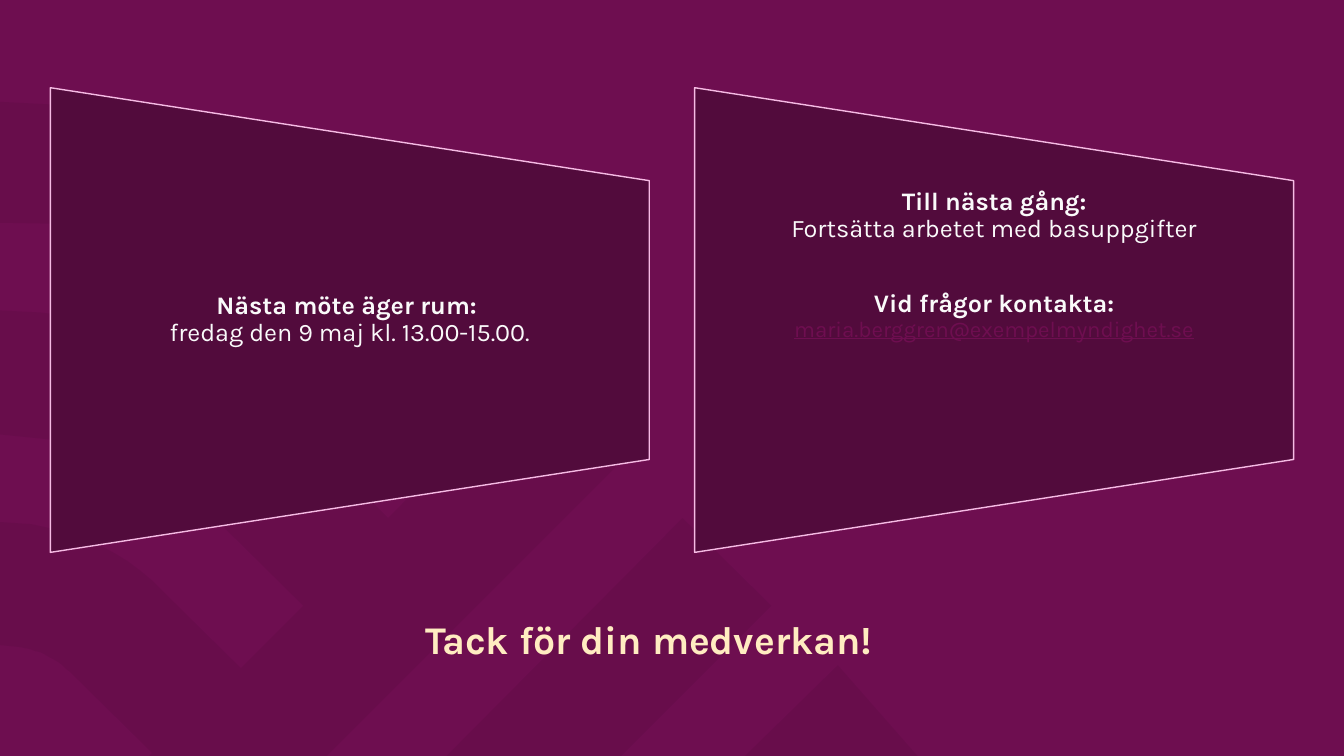
from lxml import etree
from pptx import Presentation
from pptx import util as u
from pptx.dml.color import RGBColor
from pptx.enum import shapes, text
from pptx.oxml.ns import qn

THEME = {
    "font": "Karla",
    "background": "6E0E50", "pattern": "370728", "panel": "520B3C",
    "outline": "F6BBE4", "body": "FAFAFA", "thanks": "FFECC1",
    "body_size": 18, "mail_size": 16, "thanks_size": 28,
}
WIDTH, HEIGHT = 13.33, 7.5
MARGIN, PANEL_WIDTH, PANEL_HEIGHT = 0.5, 5.94, 4.61
PANEL_TOP = 0.87
COLUMN_STEP = WIDTH - 2 * MARGIN - PANEL_WIDTH
TEXT_TOP, TEXT_HEIGHT = PANEL_TOP + PANEL_HEIGHT / 5, PANEL_HEIGHT * 0.6
CURVE_STEPS = 12
UNITS = 100  # outline units per inch


def add_run(paragraph, wording, size, color, bold=False, underline=None):
    run = paragraph.add_run()
    run.text = wording
    run.font.name = THEME["font"]
    run.font.size = u.Pt(THEME[size])
    run.font.bold = bold
    run.font.underline = underline
    run.font.color.rgb = RGBColor.from_string(THEME[color])


def flatten(outline):
    """Turn an outline of points and cubic curves (six numbers) into points."""
    points = [outline[0]]
    for step in outline[1:]:
        if len(step) == 2:
            points.append(step)
            continue
        controls = [points[-1], step[:2], step[2:4], step[4:]]
        for i in range(1, CURVE_STEPS + 1):
            t = i / CURVE_STEPS
            weights = ((1 - t) ** 3, 3 * t * (1 - t) ** 2, 3 * t ** 2 * (1 - t), t ** 3)
            points.append(tuple(sum(w * c[axis] for w, c in zip(weights, controls))
                                for axis in (0, 1)))
    return [(x * UNITS, y * UNITS) for x, y in points]


presentation = Presentation()
presentation.slide_width = u.Inches(WIDTH)
presentation.slide_height = u.Inches(HEIGHT)
slide = presentation.slides.add_slide(presentation.slide_layouts[6])
slide.background.fill.solid()
slide.background.fill.fore_color.rgb = RGBColor.from_string(THEME["background"])

# Faint background pattern
pattern_outlines = [
    [(8.31, 6.6), (9.1, 7.5), (7.39, 7.5)],
    [(6.77, 5.14), (7.65, 6.01), (6.16, 7.5), (4.43, 7.5)],
    [(0, 1.01), (0.58, 1.04), (2.03, 1.18, 3.44, 1.8, 4.54, 2.91),
     (6.19, 4.55), (3.24, 7.5), (1.48, 7.5), (1.51, 7.47), (0.74, 6.71),
     (0.59, 6.55, 0.4, 6.45, 0.2, 6.42), (0, 6.4), (0, 5.18), (0.02, 5.18),
     (0.6, 5.19, 1.18, 5.42, 1.62, 5.87), (2.39, 6.63), (3.01, 6.01),
     (2.24, 5.25), (2.21, 5.21), (1.75, 4.76, 1.18, 4.48, 0.59, 4.37),
     (0, 4.31), (0, 3.08), (0.4, 3.1), (1.38, 3.2, 2.33, 3.62, 3.08, 4.37),
     (3.85, 5.14), (4.47, 4.51), (3.7, 3.75),
     (2.84, 2.87, 1.71, 2.34, 0.53, 2.22), (0, 2.21)],
]
first, *others = [flatten(outline) for outline in pattern_outlines]
builder = slide.shapes.build_freeform(*first[0], scale=u.Inches(1) / UNITS)
builder.add_line_segments(first[1:], close=True)
for points in others:
    builder.move_to(*points[0])
    builder.add_line_segments(points[1:], close=True)
pattern = builder.convert_to_shape()
pattern.shadow.inherit = False
pattern.line.fill.background()
pattern.fill.solid()
pattern.fill.fore_color.rgb = RGBColor.from_string(THEME["pattern"])
pattern_color = pattern.fill._xPr.find(qn("a:solidFill"))[0]
etree.SubElement(pattern_color, qn("a:alpha")).set("val", "10000")

# Two panels: each paragraph is a bold heading over one line
next_meeting = [
    ("Nästa möte äger rum: ", "fredag den 9 maj kl. 13.00-15.00.", "body_size", "body", None),
]
next_steps = [
    ("Till nästa gång:", "Fortsätta arbetet med basuppgifter", "body_size", "body", None),
    ("Vid frågor kontakta:", "maria.berggren@exempelmyndighet.se",
     "mail_size", "background", True),
]
panels = [(next_meeting, text.MSO_ANCHOR.MIDDLE, 0), (next_steps, text.MSO_ANCHOR.TOP, 0.08)]
for column, (entries, anchor, top_inset) in enumerate(panels):
    left = MARGIN + column * COLUMN_STEP
    overhang = (PANEL_WIDTH - PANEL_HEIGHT) / 2  # the shape is turned on its side
    panel = slide.shapes.add_shape(
        shapes.MSO_SHAPE.FLOWCHART_MANUAL_OPERATION,
        u.Inches(left + overhang), u.Inches(PANEL_TOP - overhang),
        u.Inches(PANEL_HEIGHT), u.Inches(PANEL_WIDTH))
    panel.rotation = 270
    panel.shadow.inherit = False
    panel.fill.solid()
    panel.fill.fore_color.rgb = RGBColor.from_string(THEME["panel"])
    panel.line.color.rgb = RGBColor.from_string(THEME["outline"])
    panel.line.width = u.Pt(1)

    frame = slide.shapes.add_textbox(
        u.Inches(left), u.Inches(TEXT_TOP),
        u.Inches(PANEL_WIDTH), u.Inches(TEXT_HEIGHT)).text_frame
    frame.word_wrap = True
    frame.vertical_anchor = anchor
    frame.margin_left = frame.margin_right = u.Inches(0.12)
    frame.margin_top, frame.margin_bottom = u.Inches(top_inset), 0
    for index, (heading, detail, size, color, underline) in enumerate(entries):
        paragraph = frame.add_paragraph() if index else frame.paragraphs[0]
        paragraph.alignment = text.PP_ALIGN.CENTER
        paragraph.line_spacing = 0.9
        paragraph.space_before = u.Pt(34 if index else 0)
        add_run(paragraph, heading, "body_size", "body", bold=True)
        paragraph.add_line_break()
        add_run(paragraph, detail, size, color, underline=underline)

# Closing line
thanks = slide.shapes.add_textbox(u.Inches(4.12), u.Inches(6.06), u.Inches(5.1), u.Inches(0.57))
thanks.text_frame.word_wrap = True
add_run(thanks.text_frame.paragraphs[0], "Tack för din medverkan!",
        "thanks_size", "thanks", bold=True)

presentation.save("out.pptx")
